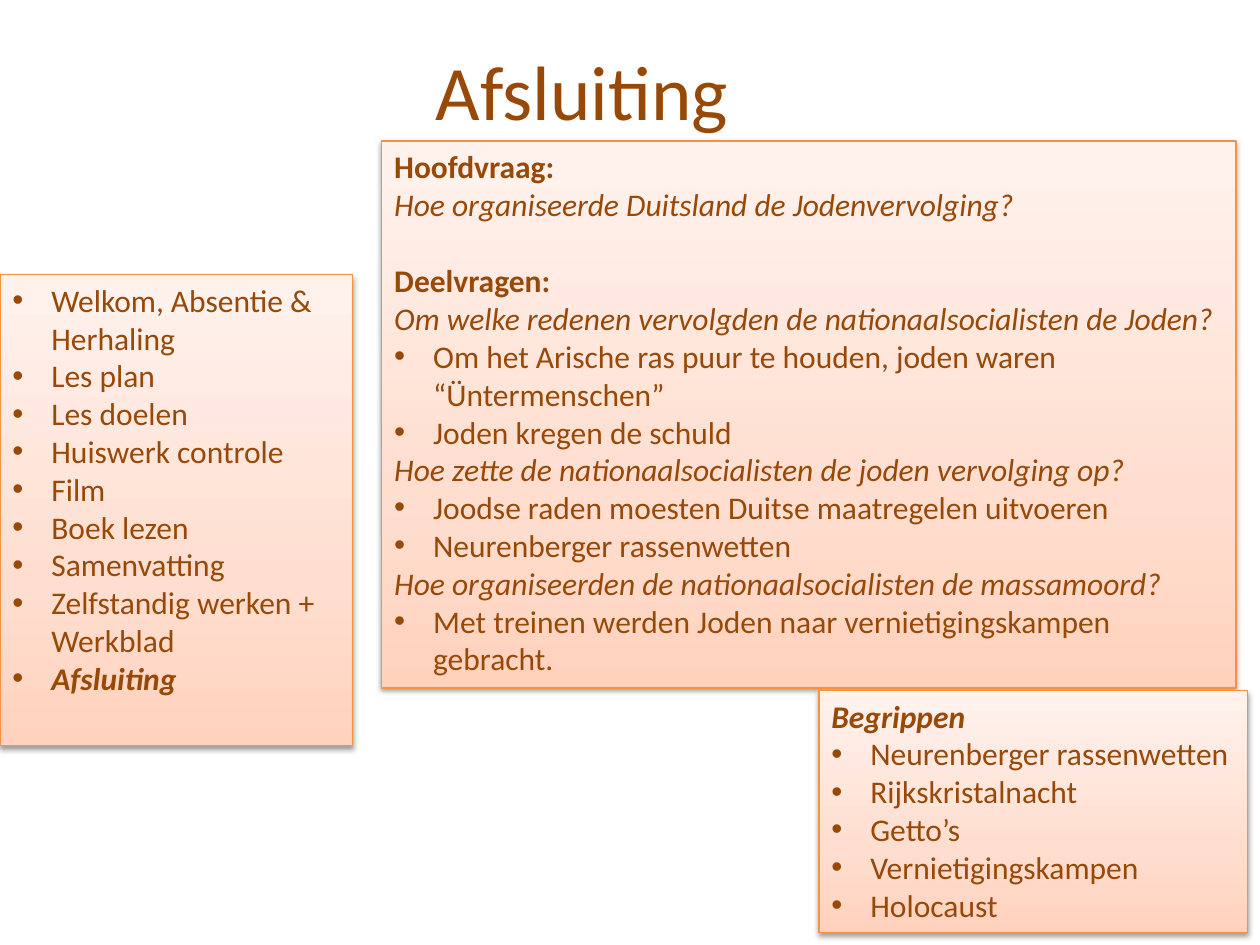
from lxml import etree
from pptx import Presentation
from pptx.dml.color import RGBColor
from pptx.enum.shapes import MSO_SHAPE
from pptx.enum.text import MSO_ANCHOR, PP_ALIGN
from pptx.oxml.ns import qn
from pptx.util import Inches, Pt

COLORS = {
    "text": "984807",
    "border": "F69240",
    "shadow": "000000",
    "panel_dark": "FFD2BD",
    "panel_middle": "FFDED0",
    "panel_light": "FFF2ED",
}
PANEL_STOPS = ((0, "panel_dark"), (35, "panel_middle"), (100, "panel_light"))
FONT = "Calibri"
BULLET_INDENT = Inches(0.31)

HEADING = {"bold": True}
QUESTION = {"italic": True}
BULLET = {"bullet": True}

AGENDA = [
    ("Welkom, Absentie & Herhaling", BULLET),
    ("Les plan", BULLET),
    ("Les doelen", BULLET),
    ("Huiswerk controle", BULLET),
    ("Film", BULLET),
    ("Boek lezen", BULLET),
    ("Samenvatting", BULLET),
    ("Zelfstandig werken + Werkblad", BULLET),
    ("Afsluiting", {"bullet": True, "bold": True, "italic": True}),
]
QUESTIONS = [
    ("Hoofdvraag:", HEADING),
    ("Hoe organiseerde Duitsland de Jodenvervolging?", QUESTION),
    ("Deelvragen:", {"bold": True, "space_before": 22}),
    ("Om welke redenen vervolgden de nationaalsocialisten de Joden?", QUESTION),
    ("Om het Arische ras puur te houden, joden waren\n“Üntermenschen”", BULLET),
    ("Joden kregen de schuld", BULLET),
    ("Hoe zette de nationaalsocialisten de joden vervolging op?", QUESTION),
    ("Joodse raden moesten Duitse maatregelen uitvoeren", BULLET),
    ("Neurenberger rassenwetten", BULLET),
    ("Hoe organiseerden de nationaalsocialisten de massamoord?", QUESTION),
    ("Met treinen werden Joden naar vernietigingskampen\ngebracht.", BULLET),
]
CONCEPTS = [
    ("Begrippen", {"bold": True, "italic": True}),
    ("Neurenberger rassenwetten", BULLET),
    ("Rijkskristalnacht", BULLET),
    ("Getto’s", BULLET),
    ("Vernietigingskampen", BULLET),
    ("Holocaust", BULLET),
]


def rgb(name):
    return RGBColor.from_string(COLORS[name])


def add_bullet(para):
    properties = para._p.get_or_add_pPr()
    properties.set("marL", str(BULLET_INDENT))
    properties.set("indent", str(-BULLET_INDENT))
    etree.SubElement(properties, qn("a:buFont"), typeface="Arial")
    etree.SubElement(properties, qn("a:buChar"), char="•")


def write(para, text, size=18, bold=False, italic=False, bullet=False,
          space_before=0, align=PP_ALIGN.LEFT):
    para.text = text
    para.alignment = align
    if space_before:
        para.space_before = Pt(space_before)
    if bullet:
        add_bullet(para)
    for span in para.runs:
        span.font.name = FONT
        span.font.size = Pt(size)
        span.font.bold = bold
        span.font.italic = italic
        span.font.color.rgb = rgb("text")


def add_color(parent, name):
    return etree.SubElement(parent, qn("a:srgbClr"), val=COLORS[name])


def style_panel(shape):
    # Gradient running from the bottom edge to the top
    shape.fill.gradient()
    shape.fill.gradient_angle = 90
    stops = shape._element.spPr.find(".//" + qn("a:gsLst"))
    for stop in list(stops):
        stops.remove(stop)
    for position, name in PANEL_STOPS:
        add_color(etree.SubElement(stops, qn("a:gs"), pos=str(position * 1000)), name)
    shape.line.color.rgb = rgb("border")
    shape.line.width = Pt(0.75)
    # Soft shadow below
    shape.shadow.inherit = False
    effects = shape._element.spPr.find(qn("a:effectLst"))
    shadow = etree.SubElement(effects, qn("a:outerShdw"), blurRad=str(Pt(3.1)),
                              dist=str(Pt(1.6)), dir="5400000", rotWithShape="0")
    etree.SubElement(add_color(shadow, "shadow"), qn("a:alpha"), val="38000")


def add_panel(page, box, lines):
    shape = page.shapes.add_shape(MSO_SHAPE.RECTANGLE, *map(Inches, box))
    style_panel(shape)
    frame = shape.text_frame
    frame.word_wrap = True
    frame.vertical_anchor = MSO_ANCHOR.TOP
    for index, (text, style) in enumerate(lines):
        para = frame.add_paragraph() if index else frame.paragraphs[0]
        write(para, text, **style)


def place_title(page, box, text):
    title = page.shapes.title
    title.left, title.top, title.width, title.height = map(Inches, box)
    title.text_frame.vertical_anchor = MSO_ANCHOR.MIDDLE
    write(title.text_frame.paragraphs[0], text, size=44, align=PP_ALIGN.CENTER)


def main():
    deck = Presentation()
    deck.slide_width, deck.slide_height = Inches(10), Inches(7.5)
    page = deck.slides.add_slide(deck.slide_layouts.get_by_name("Title Only"))

    place_title(page, (0.12, 0.09, 9, 1.25), "Afsluiting")
    add_panel(page, (0, 2.18, 2.8, 3.74), AGENDA)
    add_panel(page, (3.03, 1.12, 6.78, 4.34), QUESTIONS)
    add_panel(page, (6.5, 5.48, 3.4, 1.92), CONCEPTS)

    deck.save("out.pptx")


if __name__ == "__main__":
    main()
